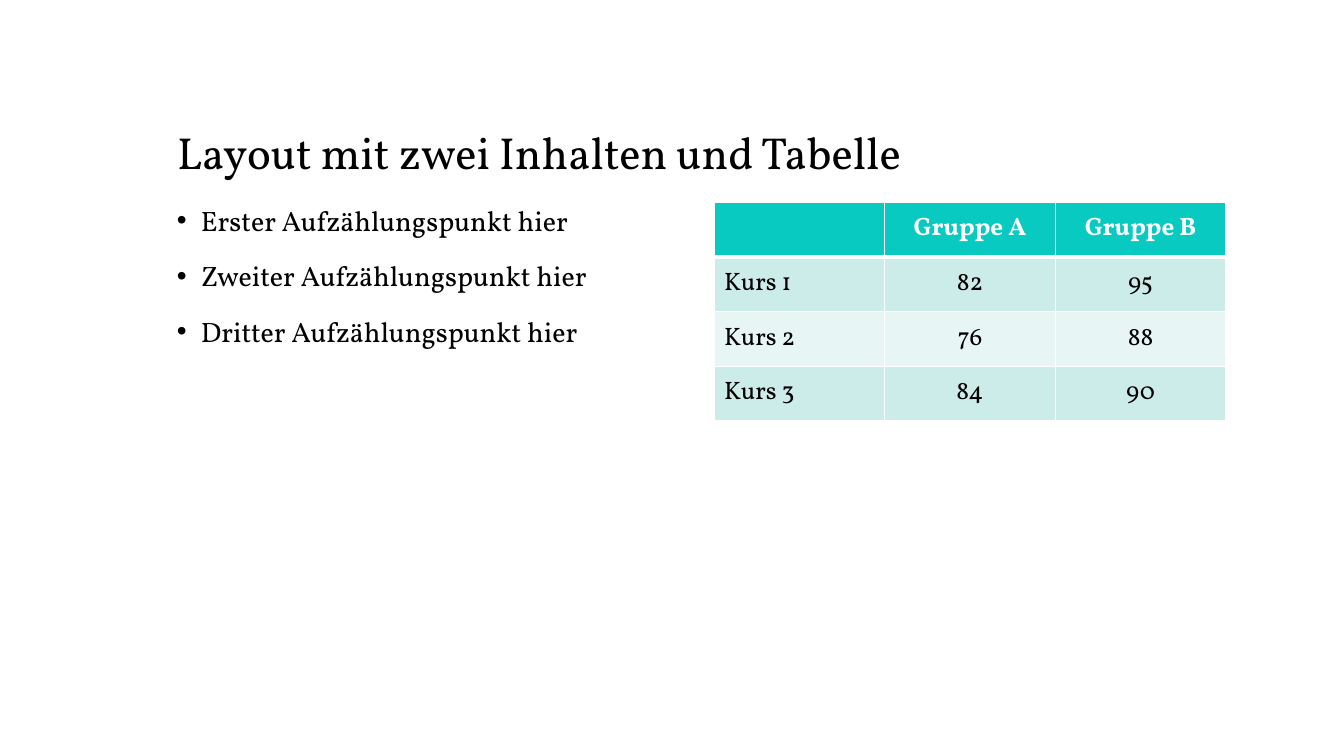
from lxml.etree import SubElement
from pptx import Presentation
from pptx.dml.color import RGBColor
from pptx.enum.text import MSO_ANCHOR, MSO_AUTO_SIZE, PP_ALIGN
from pptx.oxml.ns import qn
from pptx.util import Pt

TITLE = "Layout mit zwei Inhalten und Tabelle"
POINTS = [
    "Erster Aufzählungspunkt hier",
    "Zweiter Aufzählungspunkt hier",
    "Dritter Aufzählungspunkt hier",
]
ROWS = [
    ("", "Gruppe A", "Gruppe B"),
    ("Kurs 1", "82", "95"),
    ("Kurs 2", "76", "88"),
    ("Kurs 3", "84", "90"),
]

BLACK = RGBColor(0x00, 0x00, 0x00)
WHITE = RGBColor(0xFF, 0xFF, 0xFF)
TEAL = RGBColor(0x08, 0xCA, 0xC1)
MINT = RGBColor(0xCC, 0xEC, 0xE9)
PALE = RGBColor(0xE7, 0xF6, 0xF4)

FONT = "Vollkorn"
HEAD = {"name": FONT, "size": Pt(32), "bold": False}
BODY = {"name": FONT, "size": Pt(20), "bold": False}
TOP = {"name": FONT, "size": Pt(18), "bold": True}
CELL = {"name": FONT, "size": Pt(18), "bold": False}

SCALE = 914400 / 100.8
LEFT, WIDE, COL, GAP = 167, 1058, 512, 35
HIGH = 219


def px(num):
    return round(num * SCALE)


def place(shape, *box):
    for key, num in zip(("left", "top", "width", "height"), box):
        setattr(shape, key, px(num))


def style(font, form, color):
    for key, value in form.items():
        setattr(font, key, value)
    font.color.rgb = color


def bullet(para):
    props = para._p.get_or_add_pPr()
    props.set("marL", str(px(24)))
    props.set("indent", str(-px(24)))
    SubElement(props, qn("a:buFont"), typeface="Arial")
    SubElement(props, qn("a:buChar"), char="•")


def border(cell, row):
    props = cell._tc.get_or_add_tcPr()
    thick = {"T": 3 if row == 1 else 1, "B": 3 if row == 0 else 1}
    for side in "LRTB":
        line = SubElement(props, qn("a:ln" + side), w=str(Pt(thick.get(side, 1))))
        fill = SubElement(line, qn("a:solidFill"))
        SubElement(fill, qn("a:srgbClr"), val=str(WHITE))


def add_title(slide):
    title = slide.shapes.title
    place(title, LEFT, 58, WIDE, 126)
    frame = title.text_frame
    frame.text = TITLE
    frame.auto_size = MSO_AUTO_SIZE.NONE
    frame.vertical_anchor = MSO_ANCHOR.BOTTOM
    para = frame.paragraphs[0]
    para.alignment = PP_ALIGN.LEFT
    para.line_spacing = 0.9
    style(para.runs[0].font, HEAD, BLACK)


def add_points(slide):
    box = slide.shapes.add_textbox(0, 0, 0, 0)
    place(box, LEFT, 202, COL, 462)
    frame = box.text_frame
    frame.word_wrap = True
    frame.text = "\n".join(POINTS)
    for num, para in enumerate(frame.paragraphs):
        bullet(para)
        para.line_spacing = 0.9
        para.space_before = Pt(18 if num else 0)
        style(para.runs[0].font, BODY, BLACK)


def add_grid(slide):
    size = len(ROWS), len(ROWS[0])
    left = LEFT + COL + GAP
    grid = slide.shapes.add_table(*size, px(left), px(202), px(COL), px(HIGH)).table
    for col in grid.columns:
        col.width = px(COL / size[1])
    for num, texts in enumerate(ROWS):
        grid.rows[num].height = px(HIGH / size[0])
        form, ink = (CELL, BLACK) if num else (TOP, WHITE)
        fill = (MINT if num % 2 else PALE) if num else TEAL
        for pos, text in enumerate(texts):
            cell = grid.cell(num, pos)
            border(cell, num)
            cell.fill.solid()
            cell.fill.fore_color.rgb = fill
            cell.vertical_anchor = MSO_ANCHOR.MIDDLE
            cell.text = text
            para = cell.text_frame.paragraphs[0]
            para.alignment = PP_ALIGN.CENTER if pos else PP_ALIGN.LEFT
            style(para.font, form, ink)
            for run in para.runs:
                style(run.font, form, ink)


def main():
    deck = Presentation()
    deck.slide_width, deck.slide_height = px(1344), px(756)
    slide = deck.slides.add_slide(deck.slide_layouts[5])
    add_title(slide)
    add_points(slide)
    add_grid(slide)
    deck.save("out.pptx")


if __name__ == "__main__":
    main()
